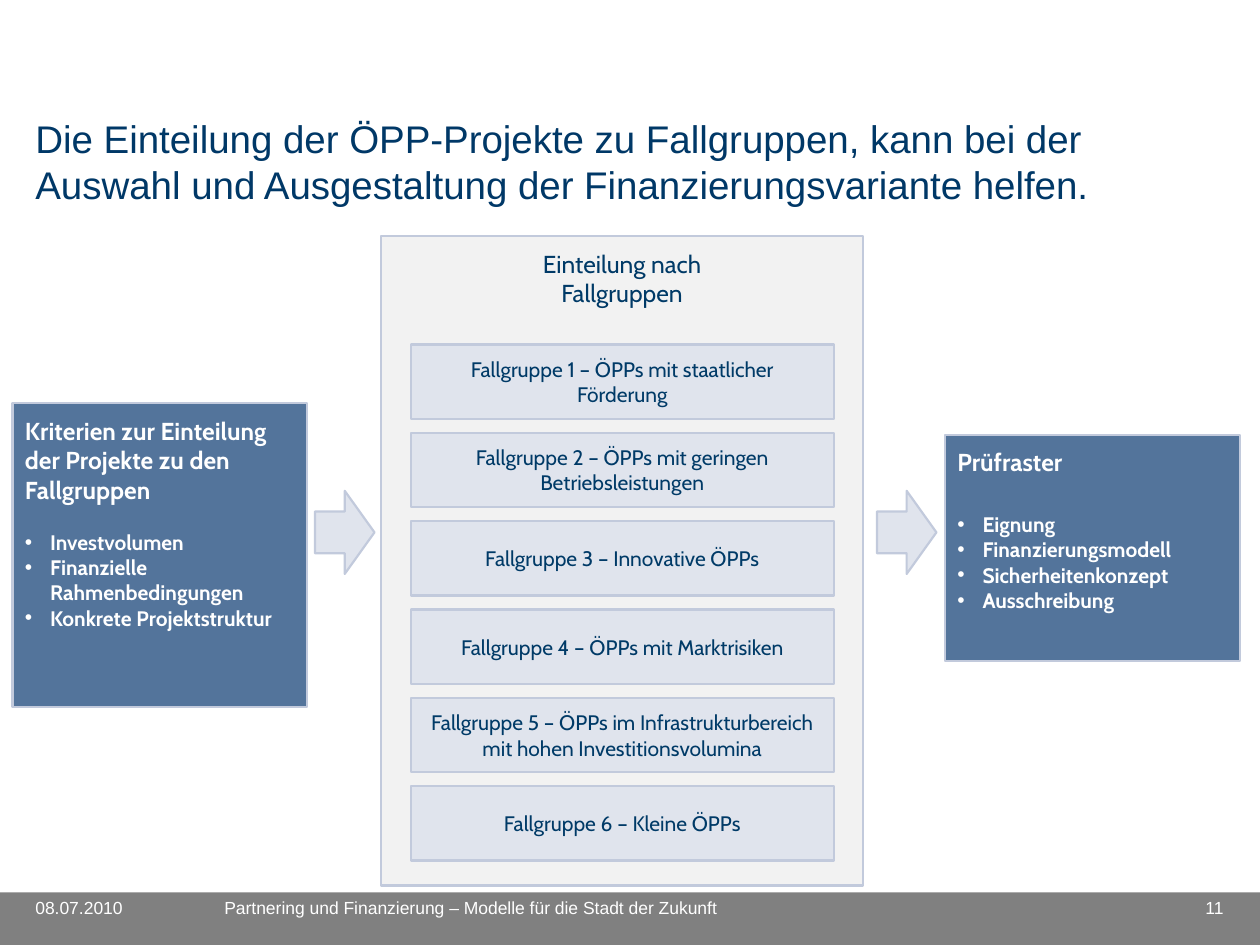
from lxml.etree import SubElement
from pptx import Presentation
from pptx.dml.color import RGBColor
from pptx.enum.shapes import MSO_SHAPE
from pptx.enum.text import MSO_ANCHOR, PP_ALIGN
from pptx.oxml.ns import qn
from pptx.util import Pt

TITLE_BLUE = RGBColor(0x00, 0x38, 0x67)
TEXT_BLUE = RGBColor(0x00, 0x3A, 0x67)
PANEL_BLUE = RGBColor(0x53, 0x74, 0x9B)
PALE_BLUE = RGBColor(0xE0, 0xE4, 0xED)
BORDER = RGBColor(0xC2, 0xCA, 0xDC)
LIGHT_GREY = RGBColor(0xF2, 0xF2, 0xF2)
FOOTER_GREY = RGBColor(0x80, 0x80, 0x80)
WHITE = RGBColor(0xFF, 0xFF, 0xFF)

TITLE = ("Die Einteilung der ÖPP-Projekte zu Fallgruppen, kann bei der "
         "Auswahl und Ausgestaltung der Finanzierungsvariante helfen.")
GROUPS_HEADING = ["Einteilung nach", "Fallgruppen"]
GROUPS = [
    ["Fallgruppe 1 – ÖPPs mit staatlicher", "Förderung"],
    ["Fallgruppe 2 – ÖPPs mit geringen", "Betriebsleistungen"],
    ["Fallgruppe 3 – Innovative ÖPPs"],
    ["Fallgruppe 4 – ÖPPs mit Marktrisiken"],
    ["Fallgruppe 5 – ÖPPs im Infrastrukturbereich", "mit hohen Investitionsvolumina"],
    ["Fallgruppe 6 – Kleine ÖPPs"],
]
# left, top, width, height, gap below heading, heading, bullets
PANELS = [
    (7.2, 230.4, 168.5, 173.5, 14.5, "Kriterien zur Einteilung der Projekte zu den Fallgruppen",
     ["Investvolumen", "Finanzielle Rahmenbedingungen", "Konkrete Projektstruktur"]),
    (540, 248.4, 168.5, 129.6, 20, "Prüfraster",
     ["Eignung", "Finanzierungsmodell", "Sicherheitenkonzept", "Ausschreibung"]),
]
ARROW_LEFTS = [180, 501.1]
# left, width, text, alignment
FOOTER = [
    (20.2, 95.8, "08.07.2010", PP_ALIGN.LEFT),
    (128.2, 501.8, "Partnering und Finanzierung – Modelle für die Stadt der Zukunft", PP_ALIGN.LEFT),
    (645.1, 54, "11", PP_ALIGN.RIGHT),
]
GROUP_LEFT, GROUP_TOP, GROUP_WIDTH, GROUP_HEIGHT = 234.7, 196.8, 241.9, 42.5
GROUP_PITCH = 50.5
INSET = 7.2
BULLET_INDENT = 14.4


def write(shape, lines, size, color, font="Cabin", align=PP_ALIGN.LEFT,
          anchor=MSO_ANCHOR.TOP, inset=INSET):
    frame = shape.text_frame
    frame.word_wrap = True
    frame.vertical_anchor = anchor
    frame.margin_left = frame.margin_right = Pt(inset)
    frame.margin_top = frame.margin_bottom = Pt(inset)
    frame.text = "\n".join(lines)
    for paragraph in frame.paragraphs:
        paragraph.alignment = align
        for run in paragraph.runs:
            run.font.name = font
            run.font.size = Pt(size)
            run.font.color.rgb = color


def add_box(slide, left, top, width, height, fill, kind=MSO_SHAPE.RECTANGLE, border=True):
    shape = slide.shapes.add_shape(kind, Pt(left), Pt(top), Pt(width), Pt(height))
    shape.shadow.inherit = False
    shape.fill.solid()
    shape.fill.fore_color.rgb = fill
    if border:
        shape.line.color.rgb = BORDER
        shape.line.width = Pt(1.25)
    else:
        shape.line.fill.background()
    return shape


def add_label(slide, left, top, width, height, text, size, color, align=PP_ALIGN.LEFT):
    label = slide.shapes.add_textbox(Pt(left), Pt(top), Pt(width), Pt(height))
    write(label, [text], size, color, "Arial", align, inset=0)


def add_bullet(paragraph):
    properties = paragraph._p.get_or_add_pPr()
    properties.set("marL", str(Pt(BULLET_INDENT)))
    properties.set("indent", str(-Pt(BULLET_INDENT)))
    SubElement(properties, qn("a:buFont"), typeface="Arial")
    SubElement(properties, qn("a:buChar"), char="•")


def add_panel(slide, left, top, width, height, gap, heading, bullets):
    panel = add_box(slide, left, top, width, height, PANEL_BLUE)
    write(panel, [heading, *bullets], 12, WHITE)
    first, *items = panel.text_frame.paragraphs
    first.runs[0].font.size = Pt(14)
    for item in items:
        add_bullet(item)
    items[0].space_before = Pt(gap)
    for paragraph in panel.text_frame.paragraphs:
        paragraph.runs[0].font.bold = True


def main():
    presentation = Presentation()
    presentation.slide_width, presentation.slide_height = Pt(720), Pt(540)
    slide = presentation.slides.add_slide(presentation.slide_layouts[6])

    add_box(slide, 0, 510, 720, 30, FOOTER_GREY, border=False)
    add_label(slide, 20.2, 65.5, 677.5, 76.3, TITLE, 22, TITLE_BLUE)

    frame = add_box(slide, 217.6, 135, 275.8, 371, LIGHT_GREY)
    write(frame, GROUPS_HEADING, 14, TEXT_BLUE, align=PP_ALIGN.CENTER)
    for index, lines in enumerate(GROUPS):
        group = add_box(slide, GROUP_LEFT, GROUP_TOP + index * GROUP_PITCH,
                        GROUP_WIDTH, GROUP_HEIGHT, PALE_BLUE)
        write(group, lines, 12, TEXT_BLUE, align=PP_ALIGN.CENTER, anchor=MSO_ANCHOR.MIDDLE)

    for panel in PANELS:
        add_panel(slide, *panel)
    for left in ARROW_LEFTS:
        add_box(slide, left, 280.5, 34, 47.5, PALE_BLUE, MSO_SHAPE.RIGHT_ARROW)
    for left, width, text, align in FOOTER:
        add_label(slide, left, 512.6, width, 23.8, text, 10, WHITE, align)

    presentation.save("out.pptx")


if __name__ == "__main__":
    main()
